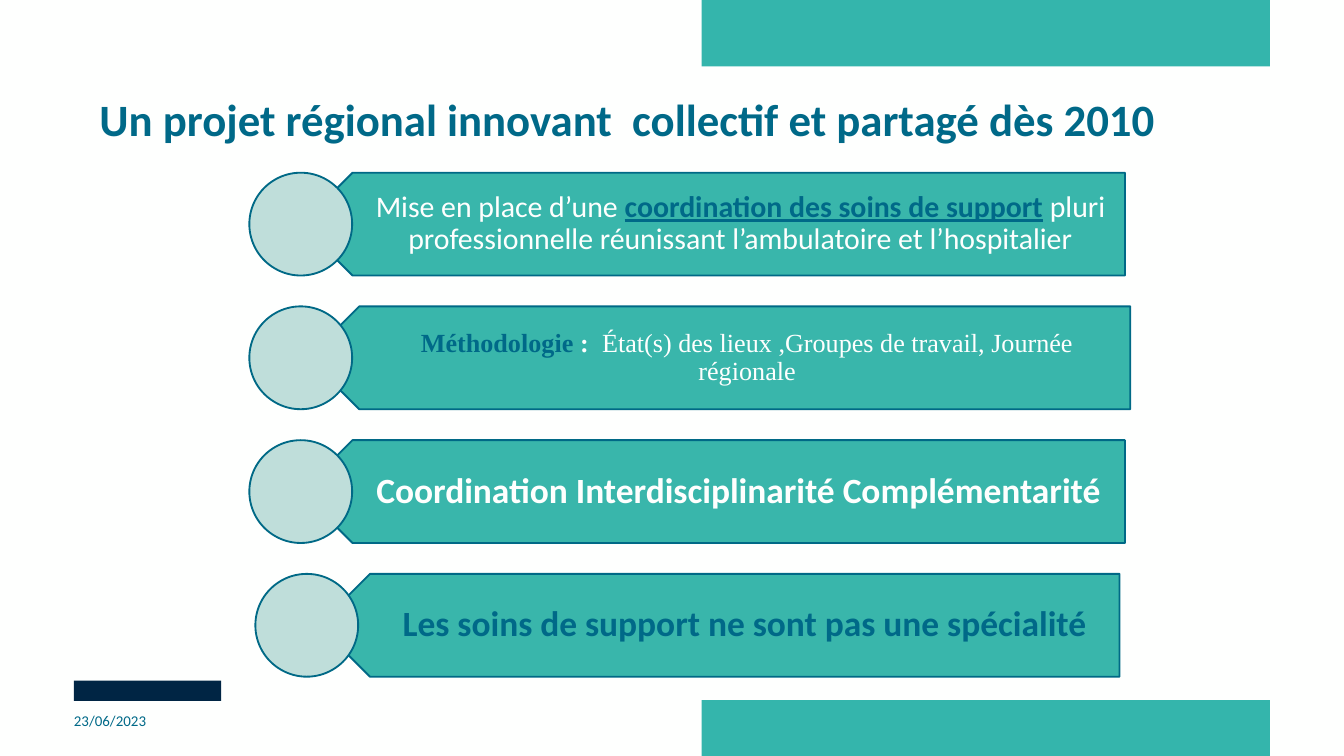
import pptx
import pptx.util
from pptx.dml.color import RGBColor
from pptx.enum.shapes import MSO_SHAPE
from pptx.enum.text import MSO_ANCHOR, PP_ALIGN

PX = 4572  # 200 px to the inch

WHITE = RGBColor(0xFE, 0xFF, 0xFE)
TEAL = RGBColor(0x34, 0xB5, 0xAC)
BANNER_TEAL = RGBColor(0x39, 0xB6, 0xAB)
PALE_TEAL = RGBColor(0xBF, 0xDE, 0xDA)
NAVY = RGBColor(0x00, 0x25, 0x44)
BLUE = RGBColor(0x00, 0x69, 0x88)
OUTLINE = RGBColor(0x00, 0x69, 0x86)

ROW_TOP, ROW_PITCH, ROW_HEIGHT = 257, 199, 153
TEXT_OFFSET = 38

# Circle left, banner left, banner width, right inset, font, size,
# then spans of (text, colour, bold, underline)
ROWS = [
    (371, 448, 1226, 24, "Calibri", 16, [
        ("Mise en place d’une ", WHITE, False, False),
        ("coordination des soins de support", BLUE, True, True),
        (" pluri professionnelle réunissant l’ambulatoire et l’hospitalier",
         WHITE, False, False)]),
    (371, 458, 1224, 22, "Times New Roman", 14, [
        ("Méthodologie ", BLUE, True, False),
        (":  ", WHITE, True, False),
        ("État(s) des lieux ,Groupes de travail, Journée régionale",
         WHITE, False, False)]),
    (371, 448, 1226, 30, "Calibri", 19, [
        ("Coordination Interdisciplinarité Complémentarité",
         WHITE, True, False)]),
    (380, 474, 1192, 30, "Calibri", 19, [
        ("Les soins de support ne sont pas une spécialité",
         BLUE, True, False)]),
]


def px(*lengths):
    return [pptx.util.Emu(length * PX) for length in lengths]


def add_block(page, kind, place, fill, outline=None):
    block = page.shapes.add_shape(kind, *px(*place))
    block.shadow.inherit = False
    block.fill.solid()
    block.fill.fore_color.rgb = fill
    if outline is None:
        block.line.fill.background()
    else:
        block.line.color.rgb = outline
        block.line.width = pptx.util.Pt(1)
    return block


def set_frame(box, insets, anchor, wrap=True):
    """Set insets (left, top, right, bottom) and return the first paragraph."""
    frame = box.text_frame
    frame.word_wrap = wrap
    frame.vertical_anchor = anchor
    (frame.margin_left, frame.margin_top,
     frame.margin_right, frame.margin_bottom) = px(*insets)
    return frame.paragraphs[0]


def set_font(para, name, size, colour=None, bold=None):
    para.font.name = name
    para.font.size = pptx.util.Pt(size)
    para.font.bold = bold
    if colour is not None:
        para.font.color.rgb = colour


def add_title(page):
    title = page.shapes.title
    title.left, title.top, title.width, title.height = px(148, 146, 1852, 154)
    para = set_frame(title, (0, 0, 0, 0), MSO_ANCHOR.TOP)
    para.text = "Un projet régional innovant  collectif et partagé dès 2010"
    para.alignment = PP_ALIGN.LEFT
    para.line_spacing = 0.9
    set_font(para, "Calibri", 24, BLUE, True)


def add_date(page):
    box = page.shapes.add_textbox(*px(110, 1043, 112, 60))
    para = set_frame(box, (0, 10, 0, 10), MSO_ANCHOR.MIDDLE, wrap=False)
    para.text = "23/06/2023"
    set_font(para, "Calibri", 8, BLUE)


def add_row(page, top, circle_left, left, width, right_inset, font, size, spans):
    """Add a banner pointing left, its text, and the circle over its tip."""
    banner = add_block(page, MSO_SHAPE.PENTAGON,
                       (left, top, width, ROW_HEIGHT), BANNER_TEAL, OUTLINE)
    banner.rotation = 180

    box = page.shapes.add_textbox(
        *px(left + TEXT_OFFSET, top, width - TEXT_OFFSET, ROW_HEIGHT))
    para = set_frame(box, (68, 14, right_inset, 14), MSO_ANCHOR.MIDDLE)
    para.alignment = PP_ALIGN.CENTER
    para.line_spacing = 0.9
    set_font(para, font, size)
    for text, colour, bold, underline in spans:
        span = para.add_run()
        span.text = text
        span.font.color.rgb = colour
        span.font.bold = bold
        span.font.underline = underline

    add_block(page, MSO_SHAPE.OVAL,
              (circle_left, top, ROW_HEIGHT, ROW_HEIGHT), PALE_TEAL, OUTLINE)


def main():
    deck = pptx.Presentation()
    deck.slide_width, deck.slide_height = px(2000, 1125)
    page = deck.slides.add_slide(deck.slide_layouts[5])
    page.background.fill.solid()
    page.background.fill.fore_color.rgb = WHITE

    add_block(page, MSO_SHAPE.RECTANGLE, (1044, 0, 846, 99), TEAL)
    add_block(page, MSO_SHAPE.RECTANGLE, (1044, 1042, 846, 83), TEAL)
    add_block(page, MSO_SHAPE.RECTANGLE, (110, 1013, 219, 30), NAVY)
    for index, row in enumerate(ROWS):
        add_row(page, ROW_TOP + index * ROW_PITCH, *row)
    add_date(page)
    add_title(page)
    deck.save("out.pptx")


if __name__ == "__main__":
    main()
